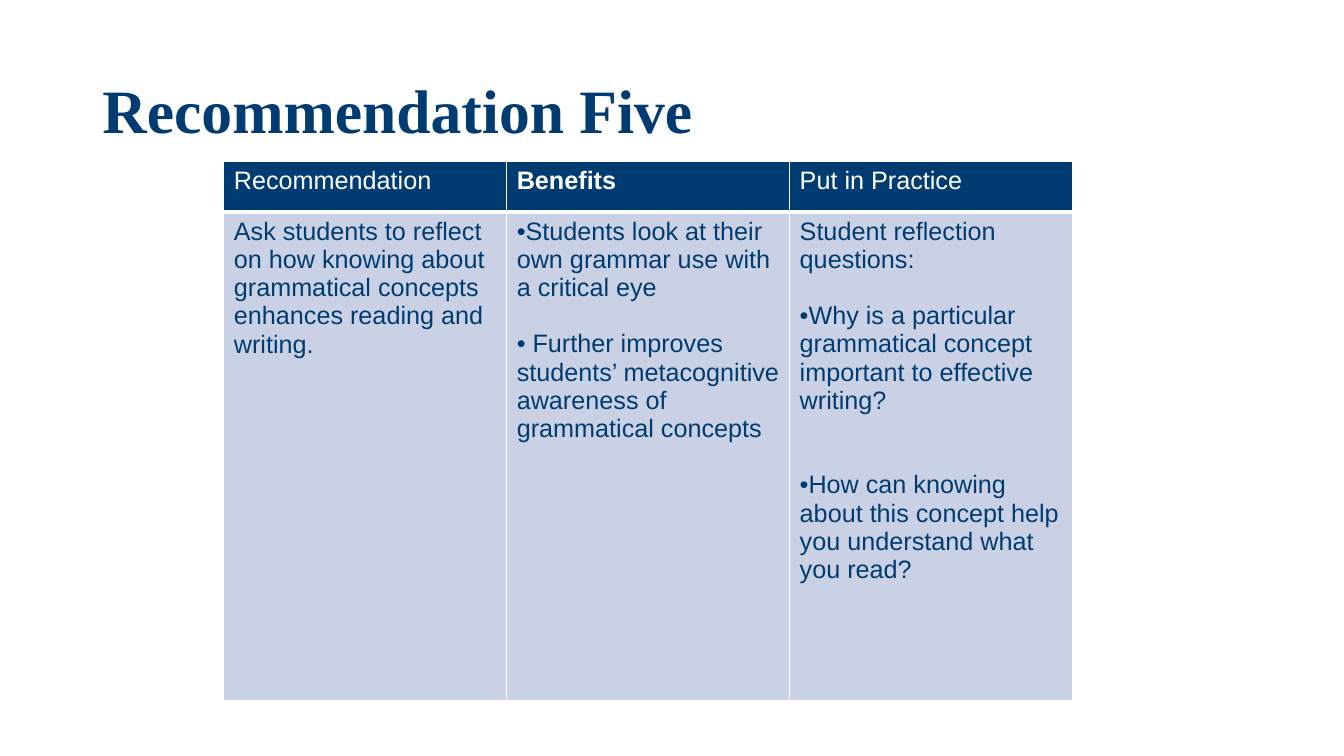
from dataclasses import dataclass

from pptx import Presentation
from pptx import util as u
from pptx.dml.color import RGBColor
from pptx.enum import text
from pptx.oxml import ns, xmlchemy

TITLE_BLUE = RGBColor(0x00, 0x3B, 0x71)
NAVY = RGBColor(0x00, 0x3C, 0x71)
PALE_BLUE = RGBColor(0xCA, 0xD1, 0xE4)
WHITE = RGBColor(0xFF, 0xFF, 0xFF)

BLANK_LAYOUT = 6
LINE_GAP = 20.1  # height of one 18 pt line, in points
COLUMN_WIDTH = u.Cm(7.13)
HEADER_HEIGHT = u.Cm(1.28)
BODY_HEIGHT = u.Cm(12.3)


@dataclass(frozen=True)
class Entry:
    wording: str
    bullet: bool = False
    lines_before: int = 0


@dataclass(frozen=True)
class Column:
    heading: str
    heading_bold: bool
    entries: tuple[Entry, ...]


COLUMNS = (
    Column("Recommendation", False, (
        Entry("Ask students to reflect on how knowing about grammatical "
              "concepts enhances reading and writing."),
    )),
    Column("Benefits", True, (
        Entry("Students look at their own grammar use with a critical eye", True),
        Entry(" Further improves students’ metacognitive awareness of "
              "grammatical concepts", True, 1),
    )),
    Column("Put in Practice", False, (
        Entry("Student reflection questions:"),
        Entry("Why is a particular grammatical concept important to "
              "effective writing?", True, 1),
        Entry("How can knowing about this concept help you understand "
              "what you read?", True, 2),
    )),
)


def apply_font(run, color: RGBColor, **values) -> None:
    for name, value in values.items():
        setattr(run.font, name, value)
    run.font.color.rgb = color


def add_bullet(paragraph) -> None:
    properties = paragraph._p.get_or_add_pPr()
    properties.set("marL", "0")
    properties.set("indent", "0")
    color = xmlchemy.OxmlElement("a:buClr")
    color.append(xmlchemy.OxmlElement("a:srgbClr"))
    color[0].set("val", str(NAVY))
    font = xmlchemy.OxmlElement("a:buFont")
    font.set("typeface", "Arial")
    mark = xmlchemy.OxmlElement("a:buChar")
    mark.set("char", "•")
    properties.extend((color, font, mark))


def add_borders(cell, top: float, bottom: float) -> None:
    """Draw white cell borders; widths are in points, the sides are 1 pt."""
    properties = cell._tc.get_or_add_tcPr()
    for side, width in {"L": 1, "R": 1, "T": top, "B": bottom}.items():
        line = xmlchemy.OxmlElement(f"a:ln{side}")
        line.set("w", str(u.Pt(width)))
        fill = xmlchemy.OxmlElement("a:solidFill")
        color = xmlchemy.OxmlElement("a:srgbClr")
        color.set("val", str(WHITE))
        fill.append(color)
        line.append(fill)
        properties.append(line)


def fill_cell(cell, entries: tuple[Entry, ...], background: RGBColor,
              color: RGBColor, bold: bool, top: float, bottom: float) -> None:
    add_borders(cell, top, bottom)
    cell.fill.solid()
    cell.fill.fore_color.rgb = background
    frame = cell.text_frame
    for index, entry in enumerate(entries):
        paragraph = frame.add_paragraph() if index else frame.paragraphs[0]
        if entry.lines_before:
            paragraph.space_before = u.Pt(entry.lines_before * LINE_GAP)
        if entry.bullet:
            add_bullet(paragraph)
        run = paragraph.add_run()
        run.text = entry.wording
        apply_font(run, color, name="Arial", size=u.Pt(18), bold=bold)


def add_title(slide, wording: str) -> None:
    shape = slide.shapes.add_textbox(u.Cm(2.33), u.Cm(1.01), u.Cm(29.21), u.Cm(3.68))
    frame = shape.text_frame
    frame_format = {
        "word_wrap": True,
        "auto_size": text.MSO_AUTO_SIZE.NONE,
        "vertical_anchor": text.MSO_ANCHOR.MIDDLE,
    }
    for name, value in frame_format.items():
        setattr(frame, name, value)
    paragraph = frame.paragraphs[0]
    paragraph.line_spacing = 0.9
    run = paragraph.add_run()
    run.text = wording
    apply_font(run, TITLE_BLUE, name="Times New Roman", size=u.Pt(44), bold=True)


def add_recommendation_table(slide) -> None:
    table = slide.shapes.add_table(
        2, len(COLUMNS), u.Cm(5.64), u.Cm(4.07),
        COLUMN_WIDTH * len(COLUMNS), HEADER_HEIGHT + BODY_HEIGHT).table
    for name in ("first_row", "horz_banding"):
        setattr(table, name, False)
    table.rows[0].height = HEADER_HEIGHT
    table.rows[1].height = BODY_HEIGHT
    for index, column in enumerate(COLUMNS):
        table.columns[index].width = COLUMN_WIDTH
        fill_cell(table.cell(0, index), (Entry(column.heading),),
                  NAVY, WHITE, column.heading_bold, top=1, bottom=3)
        fill_cell(table.cell(1, index), column.entries,
                  PALE_BLUE, NAVY, False, top=3, bottom=1)


def main() -> None:
    presentation = Presentation()
    presentation.slide_width = u.Cm(33.87)
    presentation.slide_height = u.Cm(19.05)
    slide = presentation.slides.add_slide(presentation.slide_layouts[BLANK_LAYOUT])
    add_title(slide, "Recommendation Five")
    add_recommendation_table(slide)
    presentation.save("out.pptx")


if __name__ == "__main__":
    main()
